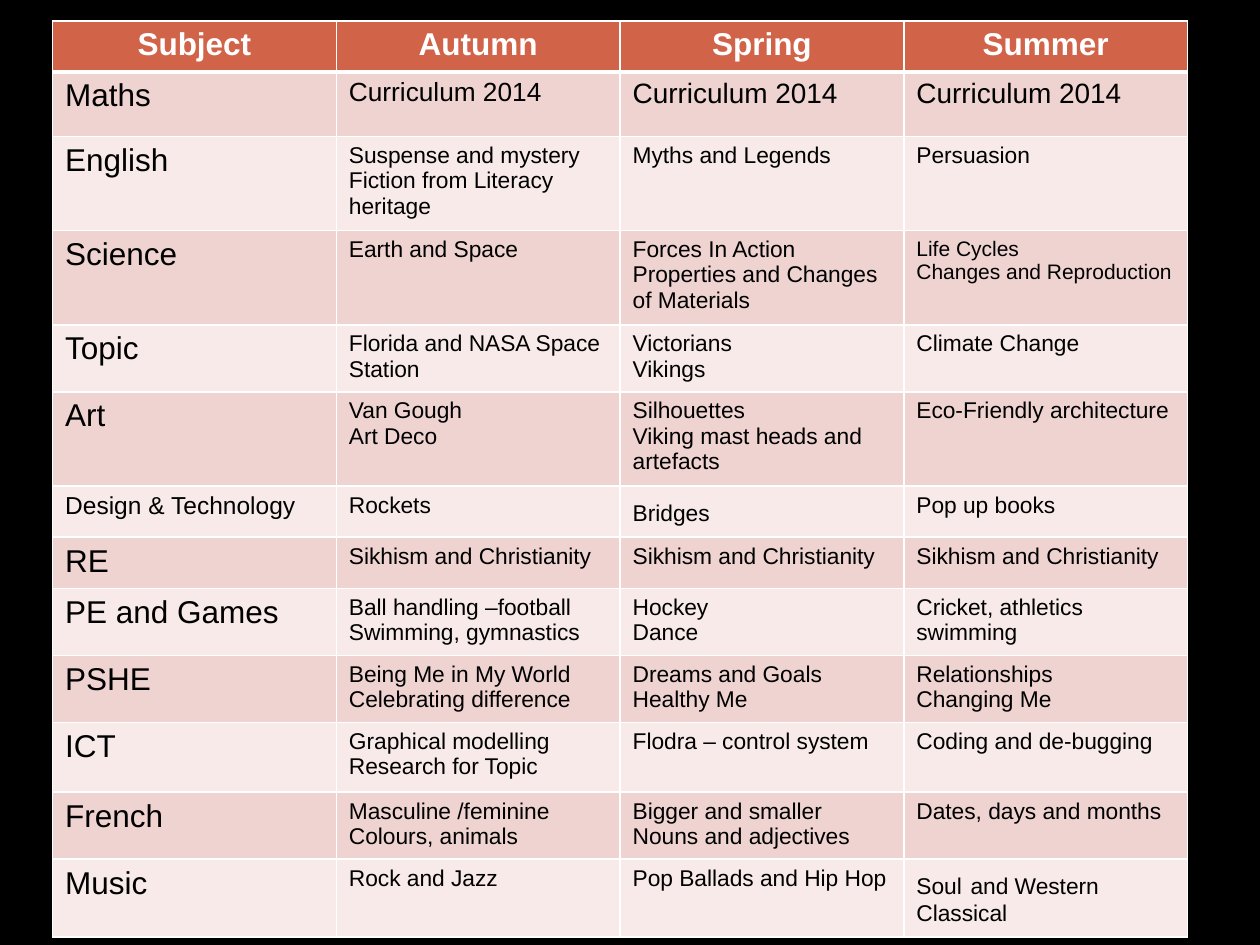
from dataclasses import dataclass

from lxml import etree
from pptx import Presentation
from pptx.dml.color import RGBColor
from pptx.enum.text import PP_ALIGN
from pptx.oxml.ns import qn
from pptx.util import Cm, Pt

CENTER = PP_ALIGN.CENTER
LEFT = PP_ALIGN.LEFT


@dataclass(frozen=True)
class Theme:
    font: str = "Arial"
    background: str = "000000"
    header: str = "D16349"
    header_text: str = "FFFFFF"
    text: str = "000000"
    bands: tuple = ("EED3D0", "F7EAE9")
    border: str = "FFFFFF"
    border_width: float = 1
    header_rule: float = 3
    subject_size: float = 18
    long_subject_size: float = 14
    large_size: float = 16
    medium_size: float = 15
    body_size: float = 13
    small_size: float = 12


THEME = Theme()
COLUMN_WIDTH = 5.72
HEADER_HEIGHT = 1.03
HEADINGS = ("Subject", "Autumn", "Spring", "Summer")
TALL_SPACE = (" ", THEME.subject_size)
CURRICULUM = "Curriculum 2014"
FAITHS = "Sikhism and Christianity"

TERMS = (
    ("Maths", 1.3, CURRICULUM, CURRICULUM, CURRICULUM),
    ("English", 1.9, "Suspense and mystery\nFiction from Literacy heritage",
     "Myths and Legends", "Persuasion"),
    ("Science", 1.9, "Earth and Space",
     "Forces In Action\nProperties and Changes of Materials",
     "Life Cycles\nChanges and Reproduction"),
    ("Topic", 1.35, "Florida and NASA Space Station", "Victorians\nVikings",
     "Climate Change"),
    ("Art", 1.9, "Van Gough\nArt Deco",
     "Silhouettes\nViking mast heads and artefacts", "Eco-Friendly architecture"),
    ("Design & Technology", 1.03, "Rockets", ("Bridges", TALL_SPACE), "Pop up books"),
    ("RE", 1.03, FAITHS, FAITHS, FAITHS),
    ("PE and Games", 1.35, "Ball handling –football\nSwimming, gymnastics",
     "Hockey\nDance", "Cricket, athletics\nswimming"),
    ("PSHE", 1.35, "Being Me in My World\nCelebrating difference",
     "Dreams and Goals\nHealthy Me", "Relationships\nChanging Me"),
    ("ICT", 1.41, "Graphical modelling\nResearch for Topic",
     "Flodra – control system", "Coding and de-bugging"),
    ("French", 1.35, "Masculine /feminine\nColours, animals",
     "Bigger and smaller\nNouns and adjectives", "Dates, days and months"),
    ("Music", 1.57, "Rock and Jazz", "Pop Ballads and Hip Hop",
     ("Soul", TALL_SPACE, "and Western Classical")),
)

SIZES = {
    ("Maths", 1): THEME.medium_size,
    ("Maths", 2): THEME.large_size,
    ("Maths", 3): THEME.large_size,
    ("Science", 3): THEME.small_size,
    ("Design & Technology", 0): THEME.long_subject_size,
}


def add_span(para, text, size, color, bold):
    span = para.add_run()
    span.text = text
    formats = {"name": THEME.font, "size": Pt(size), "bold": bold}
    for name, value in formats.items():
        setattr(span.font, name, value)
    span.font.color.rgb = RGBColor.from_string(color)


def write_cell(cell, content, size, color=THEME.text, bold=False, align=LEFT):
    lines = content.split("\n") if isinstance(content, str) else [content]
    frame = cell.text_frame
    for index, line in enumerate(lines):
        para = frame.add_paragraph() if index else frame.paragraphs[0]
        para.alignment = align
        for piece in [line] if isinstance(line, str) else line:
            text, span_size = (piece, size) if isinstance(piece, str) else piece
            add_span(para, text, span_size, color, bold)


def paint_cell(cell, fill, top, bottom):
    properties = cell._tc.get_or_add_tcPr()
    widths = {"a:lnL": THEME.border_width, "a:lnR": THEME.border_width,
              "a:lnT": top, "a:lnB": bottom}
    for tag, width in widths.items():
        line = etree.SubElement(properties, qn(tag), w=str(Pt(width)))
        solid = etree.SubElement(line, qn("a:solidFill"))
        etree.SubElement(solid, qn("a:srgbClr"), val=THEME.border)
    cell.fill.solid()
    cell.fill.fore_color.rgb = RGBColor.from_string(fill)


def add_curriculum_table(page):
    heights = [HEADER_HEIGHT] + [term[1] for term in TERMS]
    table = page.shapes.add_table(
        len(heights), len(HEADINGS), Cm(1.06), Cm(0.42),
        Cm(COLUMN_WIDTH * len(HEADINGS)), Cm(sum(heights))).table
    table.horz_banding = False
    for column in table.columns:
        column.width = Cm(COLUMN_WIDTH)
    for row, height in zip(table.rows, heights):
        row.height = Cm(height)
    return table


def fill_header(table):
    for column, heading in enumerate(HEADINGS):
        cell = table.cell(0, column)
        paint_cell(cell, THEME.header, THEME.border_width, THEME.header_rule)
        write_cell(cell, heading, THEME.subject_size, THEME.header_text, True, CENTER)


def fill_subjects(table):
    for row, (subject, _, *topics) in enumerate(TERMS, start=1):
        top = THEME.header_rule if row == 1 else THEME.border_width
        for column, content in enumerate([subject, *topics]):
            default = THEME.body_size if column else THEME.subject_size
            cell = table.cell(row, column)
            paint_cell(cell, THEME.bands[(row - 1) % 2], top, THEME.border_width)
            write_cell(cell, content, SIZES.get((subject, column), default))


def main():
    deck = Presentation()
    deck.slide_width, deck.slide_height = Cm(25.4), Cm(19.05)
    page = deck.slides.add_slide(deck.slide_layouts[6])
    page.background.fill.solid()
    page.background.fill.fore_color.rgb = RGBColor.from_string(THEME.background)
    table = add_curriculum_table(page)
    fill_header(table)
    fill_subjects(table)
    deck.save("out.pptx")


if __name__ == "__main__":
    main()
